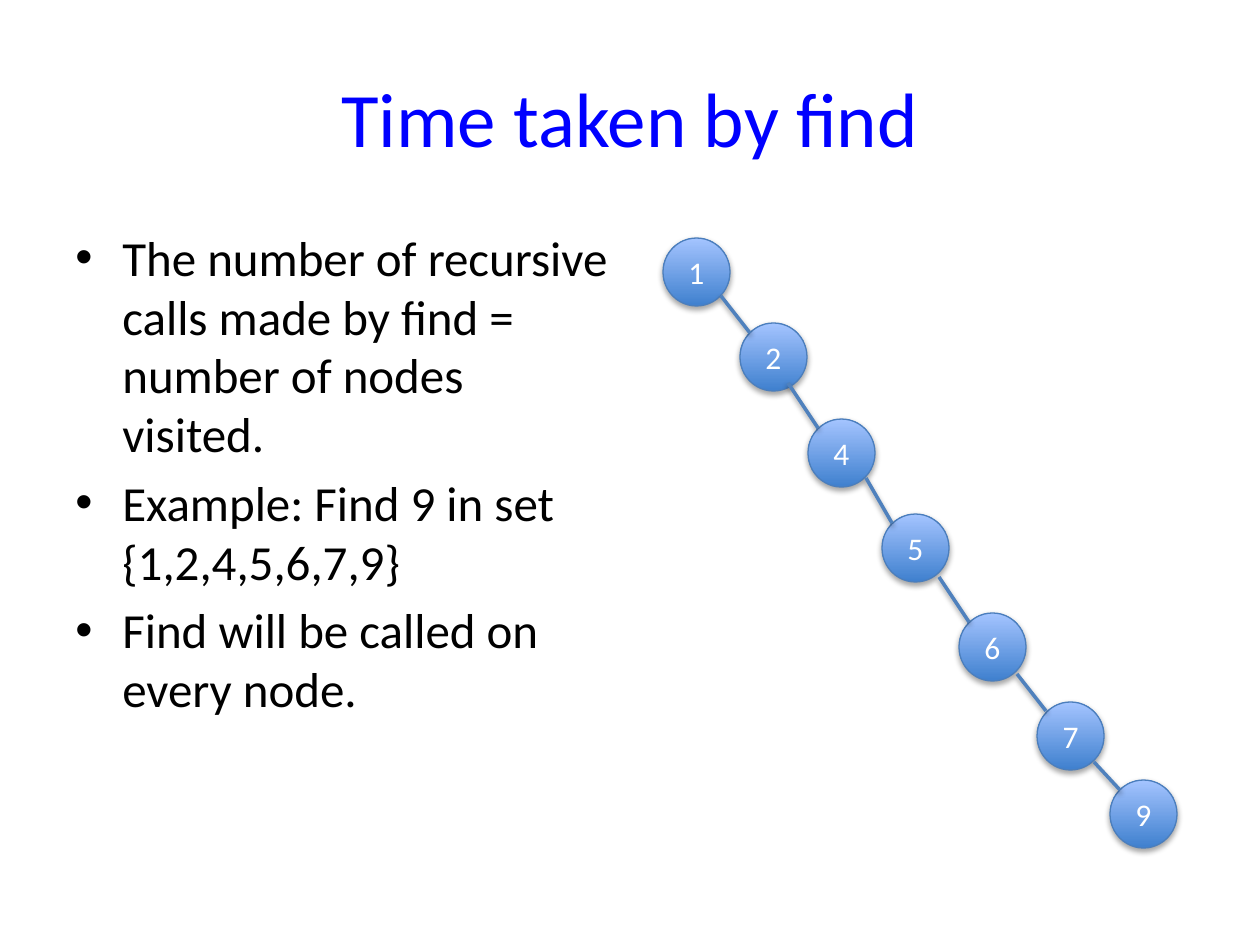
"""Build a slide on the time taken by find in a degenerate search tree."""
from typing import NamedTuple

from pptx import Presentation
from pptx.dml.color import RGBColor
from pptx.enum.shapes import MSO_CONNECTOR as Connector, MSO_SHAPE as Preset
from pptx.enum.text import MSO_ANCHOR as Anchor, PP_ALIGN as Align
from pptx.oxml import parse_xml
from pptx.oxml.ns import nsdecls
from pptx.util import Emu, Pt

SCALE = 914400 / 126
FONT = "Calibri"
NODE_WIDTH, NODE_HEIGHT = 67, 68
BULLET_INDENT = 47


class Node(NamedTuple):
    label: str
    left: int
    top: int


class Edge(NamedTuple):
    start_x: int
    start_y: int
    end_x: int
    end_y: int


NODES = [
    Node("1", 663, 238),
    Node("2", 740, 323),
    Node("4", 808, 419),
    Node("5", 882, 514),
    Node("6", 959, 613),
    Node("7", 1037, 702),
    Node("9", 1110, 780),
]
EDGES = [
    Edge(721, 296, 750, 333),
    Edge(788, 383, 818, 428),
    Edge(866, 478, 892, 523),
    Edge(939, 577, 969, 622),
    Edge(1017, 674, 1046, 711),
    Edge(1094, 762, 1120, 790),
]
BULLETS = [
    "The number of recursive calls made by find = number of nodes visited.",
    "Example: Find 9 in set {1,2,4,5,6,7,9}",
    "Find will be called on every node.",
]


def px(length: int) -> Emu:
    return Emu(round(length * SCALE))


def color(value: str) -> RGBColor:
    return RGBColor.from_string(value)


def add_run(paragraph, text: str, size: int, font_color: str) -> None:
    run = paragraph.add_run()
    run.text = text
    run.font.name = FONT
    run.font.size = Pt(size)
    run.font.color.rgb = color(font_color)


def add_shadow(shape, distance: int, opacity: int) -> None:
    shape._element.spPr.append(parse_xml(
        f'<a:effectLst {nsdecls("a")}>'
        f'<a:outerShdw blurRad="40000" dist="{distance}" dir="5400000" rotWithShape="0">'
        f'<a:srgbClr val="000000"><a:alpha val="{opacity * 1000}"/></a:srgbClr>'
        '</a:outerShdw></a:effectLst>'))


def add_text_frame(slide, left: int, top: int, width: int, height: int):
    box = slide.shapes.add_textbox(px(left), px(top), px(width), px(height))
    box.text_frame.word_wrap = True
    return box.text_frame


def add_title(slide, text: str) -> None:
    frame = add_text_frame(slide, 63, 38, 1134, 157)
    frame.vertical_anchor = Anchor.MIDDLE
    paragraph = frame.paragraphs[0]
    paragraph.alignment = Align.CENTER
    add_run(paragraph, text, 44, "0000FF")


def add_bullets(slide, bullets: list[str]) -> None:
    frame = add_text_frame(slide, 63, 221, 557, 624)
    for index, text in enumerate(bullets):
        paragraph = frame.add_paragraph() if index else frame.paragraphs[0]
        paragraph.space_before = Pt(5.6)
        properties = paragraph._p.get_or_add_pPr()
        properties.set("marL", str(px(BULLET_INDENT)))
        properties.set("indent", str(-px(BULLET_INDENT)))
        properties.append(parse_xml(f'<a:buFont {nsdecls("a")} typeface="Arial"/>'))
        properties.append(parse_xml(f'<a:buChar {nsdecls("a")} char="•"/>'))
        add_run(paragraph, text, 28, "000000")


def add_node(slide, node: Node) -> None:
    shape = slide.shapes.add_shape(
        Preset.OVAL, px(node.left), px(node.top), px(NODE_WIDTH), px(NODE_HEIGHT))
    shape.fill.gradient()
    shape.fill.gradient_angle = 90
    for stop, value in zip(shape.fill.gradient_stops, ("3F80CE", "A4C4FF")):
        stop.color.rgb = color(value)
    shape.line.color.rgb = color("4B7EBC")
    shape.line.width = Pt(0.75)
    add_shadow(shape, 23000, 35)
    shape.text_frame.vertical_anchor = Anchor.MIDDLE
    paragraph = shape.text_frame.paragraphs[0]
    paragraph.alignment = Align.CENTER
    add_run(paragraph, node.label, 18, "FFFFFF")


def add_edge(slide, edge: Edge) -> None:
    connector = slide.shapes.add_connector(Connector.STRAIGHT, *map(px, edge))
    connector.line.color.rgb = color("4F81BD")
    connector.line.width = Pt(2)
    add_shadow(connector, 20000, 38)


def main() -> None:
    presentation = Presentation()
    presentation.slide_width = px(1260)
    presentation.slide_height = px(945)
    slide = presentation.slides.add_slide(presentation.slide_layouts[6])
    add_title(slide, "Time taken by find")
    add_bullets(slide, BULLETS)
    for node in NODES:
        add_node(slide, node)
    for edge in EDGES:
        add_edge(slide, edge)
    presentation.save("out.pptx")


if __name__ == "__main__":
    main()
